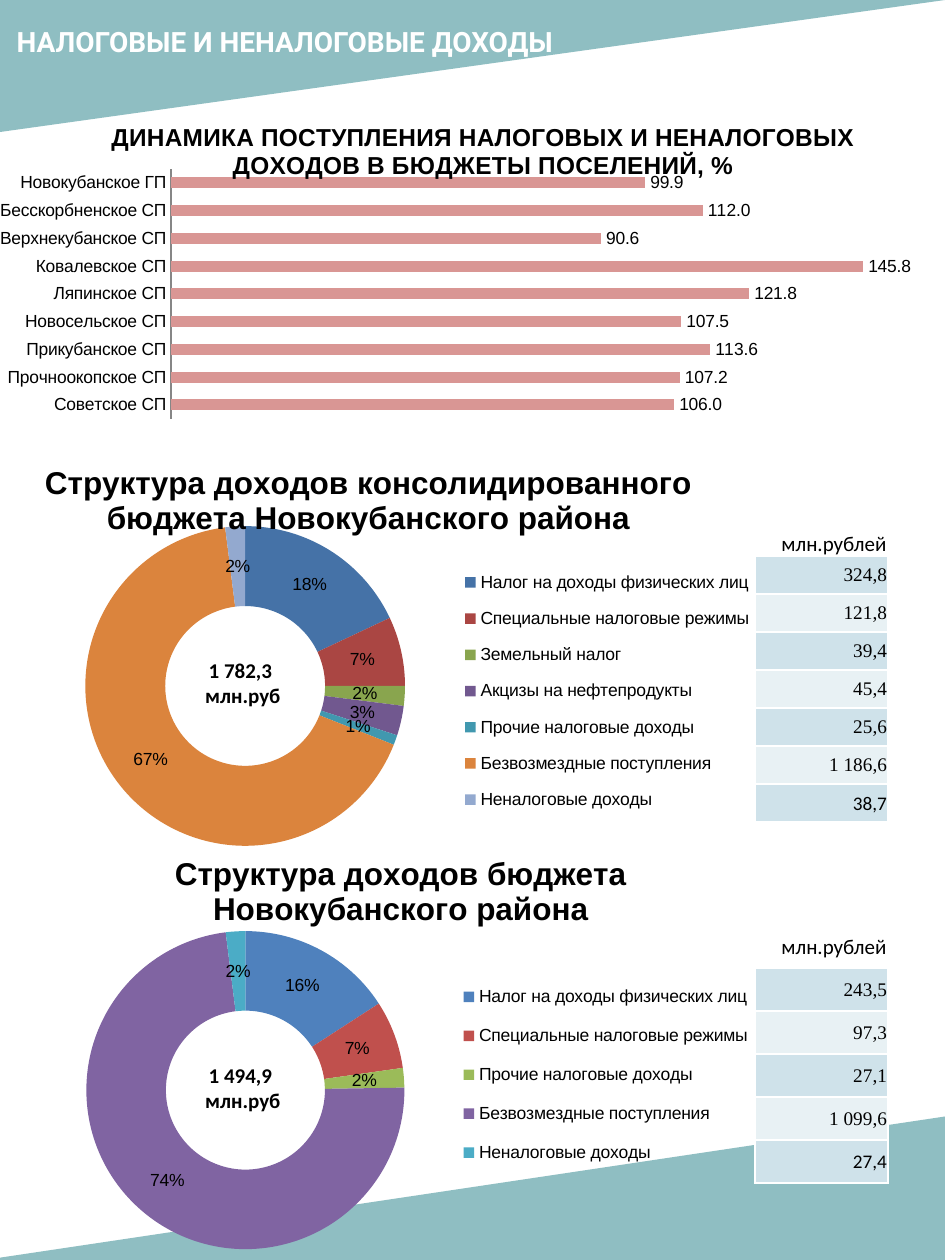
from lxml.etree import SubElement as Sub
from pptx import Presentation
from pptx.chart.data import CategoryChartData as Data
from pptx.dml.color import RGBColor as RGB
from pptx.enum.chart import XL_CHART_TYPE as Kind, XL_LABEL_POSITION as Spot
from pptx.enum.chart import XL_LEGEND_POSITION as Side, XL_TICK_MARK as Tick
from pptx.enum.shapes import MSO_SHAPE as Form
from pptx.enum.text import MSO_ANCHOR as Anchor, MSO_AUTO_SIZE as Fit, PP_ALIGN as Align
from pptx.oxml import parse_xml
from pptx.oxml.ns import nsdecls, qn
from pptx.util import Pt

SCALE = 914400 / 126
INK = {"teal": "519AA0", "white": "FFFFFF", "black": "000000", "dark": "CFE2EA",
       "pale": "E8F1F4", "rose": "D99694", "grey": "868686"}
DEEP = ["4572A7", "AA4643", "89A54E", "71588F", "4198AF", "DB843D", "93A9CF"]
CLEAR = ["4F81BD", "C0504D", "9BBB59", "8064A2", "4BACC6"]


def px(*nums):
    return [round(n * SCALE) for n in nums]


class Page:
    """Holds the style and the current slide, and draws each kind of element."""

    def __init__(self, wide, high):
        self.deck = Presentation()
        self.deck.slide_width, self.deck.slide_height = px(wide, high)
        self.slide = self.deck.slides.add_slide(self.deck.slide_layouts[5])
        self.shapes = self.slide.shapes

    def run(self, para, text, size=12, face="Calibri", ink="black", bold=False):
        run = para.add_run()
        run.text = text
        font = run.font
        font.size, font.name, font.bold = Pt(size), face, bold
        font.color.rgb = RGB.from_string(INK[ink])

    def wedge(self, box, flip):
        shape = self.shapes.add_shape(Form.RIGHT_TRIANGLE, *px(*box))
        shape.rotation = 180
        shape.element.spPr.find(qn("a:xfrm")).set(flip, "1")
        shape.shadow.inherit = False
        shape.fill.solid()
        shape.fill.fore_color.rgb = RGB.from_string(INK["teal"])
        tint = shape.element.spPr.find(".//" + qn("a:srgbClr"))
        Sub(tint, qn("a:alpha"), val="64000")
        shape.line.fill.background()

    def title(self, box, text):
        head = self.shapes.title
        head.left, head.top, head.width, head.height = px(*box)
        frame = head.text_frame
        frame.vertical_anchor, frame.auto_size = Anchor.TOP, Fit.NONE
        para = frame.paragraphs[0]
        para.alignment = Align.LEFT
        self.run(para, text, 16, "Roboto", "white", True)
        head.element.getparent().append(head.element)

    def text(self, box, lines, wrap=True, align=Align.LEFT, bold=False):
        frame = self.shapes.add_textbox(*px(*box)).text_frame
        frame.word_wrap = wrap
        for i, line in enumerate(lines):
            para = frame.add_paragraph() if i else frame.paragraphs[0]
            para.alignment = align
            self.run(para, line, bold=bold)

    def table(self, left, top, wide, step, vals):
        rows = len(vals)
        table = self.shapes.add_table(rows, 1, *px(left, top, wide, step * rows)).table
        table.first_row = table.horz_banding = False
        for i, val in enumerate(vals):
            cell = table.cell(i, 0)
            cell.margin_left, cell.margin_right, cell.margin_top, cell.margin_bottom = px(1, 1, 1, 0)
            cell.vertical_anchor = Anchor.MIDDLE
            cell.fill.solid()
            cell.fill.fore_color.rgb = RGB.from_string(INK["pale" if i % 2 else "dark"])
            para = cell.text_frame.paragraphs[0]
            para.alignment = Align.RIGHT
            self.run(para, val, 11, "Calibri" if i == rows - 1 else "Times New Roman")
            self.edge(cell)

    def edge(self, cell):
        props = cell._tc.get_or_add_tcPr()
        for i, side in enumerate("LRTB"):
            props.insert(i, parse_xml(
                f'<a:ln{side} {nsdecls("a")} w="12192"><a:solidFill>'
                f'<a:srgbClr val="{INK["white"]}"/></a:solidFill></a:ln{side}>'))

    def place(self, node, box, area):
        for old in node.findall(qn("c:layout")):
            node.remove(old)
        lead = [kid for kid in node if kid.tag in (qn("c:tx"), qn("c:legendPos"))]
        lay = parse_xml(f'<c:layout {nsdecls("c")}><c:manualLayout/></c:layout>')
        node.insert(len(lead), lay)
        if node.tag == qn("c:plotArea"):
            Sub(lay[0], qn("c:layoutTarget"), val="inner")
        for mode in ("xMode", "yMode"):
            Sub(lay[0], qn("c:" + mode), val="edge")
        left, top, wide, high = area
        parts = [(box[0] - left) / wide, (box[1] - top) / high]
        parts += [n / full for n, full in zip(box[2:], (wide, high))]
        for key, part in zip("xywh", parts):
            Sub(lay[0], qn("c:" + key), val=f"{part:.3f}")

    def chart(self, kind, area, plot, spot, title, size, cats, vals, form):
        data = Data()
        data.categories = cats
        data.add_series("Series 1", vals)
        chart = self.shapes.add_chart(kind, *px(*area), data).chart
        root = chart.element.find(qn("c:chart"))
        root.addnext(parse_xml(f'<c:spPr {nsdecls("c", "a")}><a:noFill/>'
                               '<a:ln><a:noFill/></a:ln></c:spPr>'))
        chart.font.size, chart.font.name = Pt(10), "Arial"
        chart.font.color.rgb = RGB.from_string(INK["black"])
        chart.has_legend, chart.has_title = False, True
        frame = chart.chart_title.text_frame
        for i, line in enumerate(title.split("\n")):
            para = frame.add_paragraph() if i else frame.paragraphs[0]
            self.run(para, line, size, "Arial", bold=True)
        self.place(root.find(qn("c:title")), spot, area)
        self.place(root.find(qn("c:plotArea")), plot, area)
        chart.plots[0].has_data_labels = True
        tags = chart.plots[0].data_labels
        tags.show_value, tags.show_percentage = True, False
        tags.number_format, tags.number_format_is_linked = form, False
        return chart

    def bars(self, area, plot, spot, title, cats, vals):
        chart = self.chart(Kind.BAR_CLUSTERED, area, plot, spot, title, 14, cats, vals, "0.0")
        bars = chart.plots[0]
        bars.gap_width, bars.overlap, bars.vary_by_categories = 150, -25, False
        bars.data_labels.position = Spot.OUTSIDE_END
        fill = bars.series[0].format.fill
        fill.solid()
        fill.fore_color.rgb = RGB.from_string(INK["rose"])
        axis = chart.category_axis
        axis.reverse_order, axis.major_tick_mark = True, Tick.NONE
        axis.format.line.color.rgb = RGB.from_string(INK["grey"])
        axis = chart.value_axis
        axis.visible = axis.has_major_gridlines = False
        axis.minimum_scale, axis.maximum_scale = 0, 160

    def ring(self, area, plot, spot, key, title, cats, vals, inks):
        chart = self.chart(Kind.DOUGHNUT, area, plot, spot, title, 18, cats, vals, '0"%"')
        chart.plots[0].vary_by_categories = True
        for i, ink in enumerate(inks):
            part = chart.plots[0].series[0].points[i].format
            part.fill.solid()
            part.fill.fore_color.rgb = RGB.from_string(ink)
            part.line.fill.background()
        chart.has_legend = True
        chart.legend.position = Side.RIGHT
        chart.legend.include_in_layout = False
        self.place(chart.legend._element, key, area)


def main():
    page = Page(945, 1260)
    page.wedge((0, 0, 945, 132), "flipH")
    page.wedge((-16, 1116, 964, 144), "flipV")
    page.title((4, 18, 568, 79), "НАЛОГОВЫЕ И НЕНАЛОГОВЫЕ ДОХОДЫ")
    for top in (524, 927):
        page.text((769, top, 130, 38), ["млн.рублей"], wrap=False)
    page.table(755, 556, 133, 38, ["324,8", "121,8", "39,4", "45,4", "25,6", "1 186,6", "38,7"])
    page.table(755, 968, 133, 43, ["243,5", "97,3", "27,1", "1 099,6", "27,4"])

    towns = ["Новокубанское ГП"] + [name + " СП" for name in (
        "Бесскорбненское", "Верхнекубанское", "Ковалевское", "Ляпинское",
        "Новосельское", "Прикубанское", "Прочноокопское", "Советское")]
    page.bars((0, 97, 945, 335), (167, 169, 764, 250), (103, 117),
              "ДИНАМИКА ПОСТУПЛЕНИЯ НАЛОГОВЫХ И НЕНАЛОГОВЫХ ДОХОДОВ В БЮДЖЕТЫ ПОСЕЛЕНИЙ, %",
              towns, [99.9, 112, 90.6, 145.8, 121.8, 107.5, 113.6, 107.2, 106])

    kinds = ["Налог на доходы физических лиц", "Специальные налоговые режимы",
             "Земельный налог", "Акцизы на нефтепродукты", "Прочие налоговые доходы",
             "Безвозмездные поступления", "Неналоговые доходы"]
    page.ring((-72, 436, 869, 413), (85, 526, 320, 320), (39, 456), (455, 556, 305, 270),
              "Структура доходов консолидированного бюджета Новокубанского района",
              kinds, [18, 7, 2, 3, 1, 67, 2], DEEP)
    page.ring((-58, 825, 895, 437), (86, 931, 319, 318), (171, 850), (453, 968, 305, 214),
              "Структура доходов бюджета\nНовокубанского района",
              kinds[:2] + kinds[4:], [16, 7, 2, 74, 2], CLEAR)
    for top, total in ((651, "1 782,3"), (1056, "1 494,9")):
        page.text((185, top, 111, 63), [total, " млн.руб"], align=Align.CENTER, bold=True)
    page.deck.save("out.pptx")


if __name__ == "__main__":
    main()
